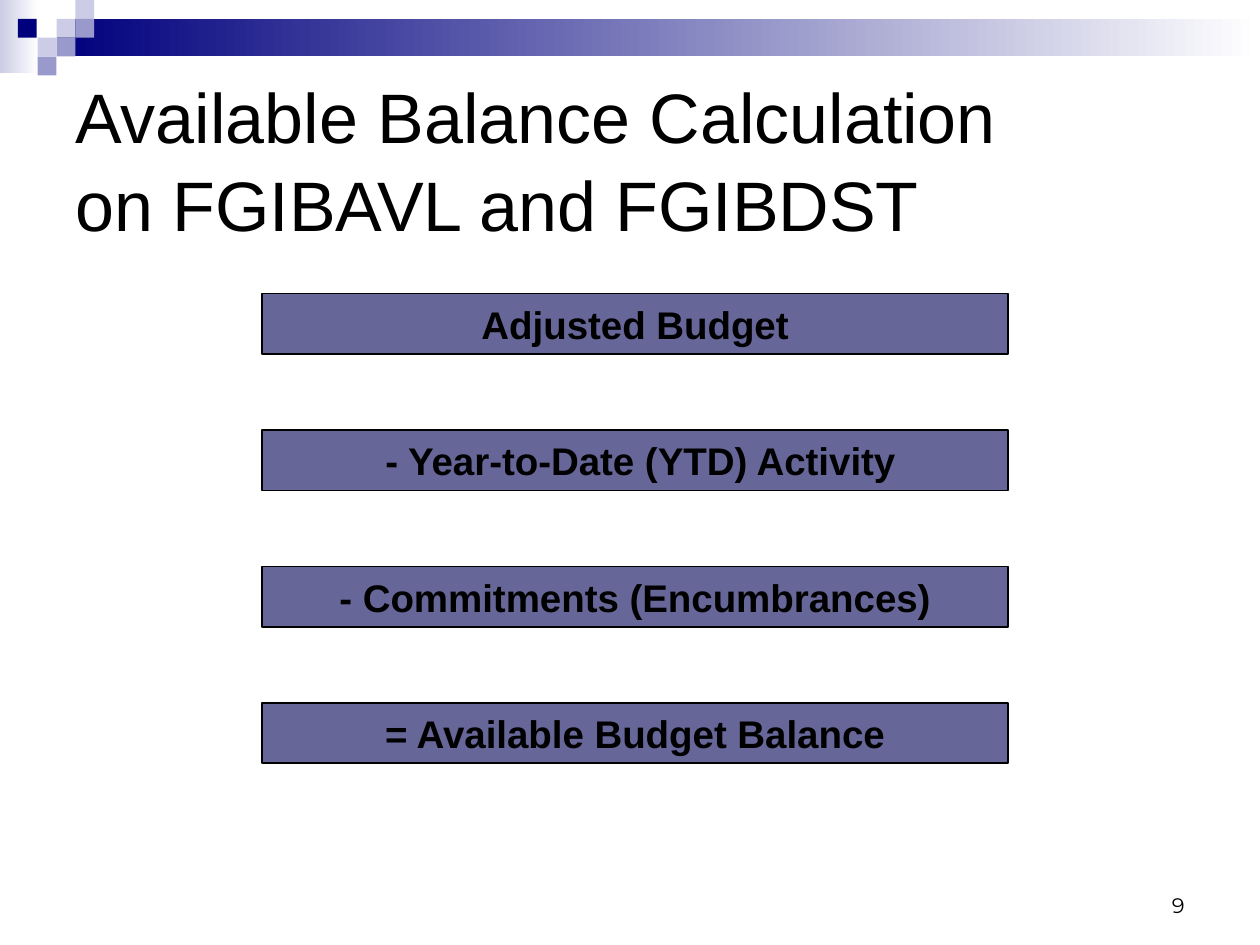
from dataclasses import dataclass

from pptx import Presentation
from pptx.dml.color import RGBColor
from pptx.enum.shapes import MSO_SHAPE
from pptx.enum.text import MSO_ANCHOR, PP_ALIGN
from pptx.util import Cm, Pt

RECTANGLE = MSO_SHAPE.RECTANGLE
MIDDLE, BOTTOM = MSO_ANCHOR.MIDDLE, MSO_ANCHOR.BOTTOM
LEFT, CENTER, RIGHT = PP_ALIGN.LEFT, PP_ALIGN.CENTER, PP_ALIGN.RIGHT


@dataclass(frozen=True)
class Theme:
    navy: str = "00007D"
    lavender: str = "CCCCE6"
    periwinkle: str = "9999CC"
    slate: str = "666699"
    black: str = "000000"
    white: str = "FFFFFF"
    font: str = "Arial"
    number_font: str = "Montserrat"
    title_size: int = 40
    step_size: int = 22
    number_size: int = 12


THEME = Theme()
TILE = 0.38
TILES = [
    (1.14, 0.38, THEME.lavender),
    (1.52, 0, THEME.lavender),
    (1.52, 0.38, THEME.periwinkle),
    (0.76, 0.76, THEME.lavender),
    (0.36, 0.38, THEME.navy),
    (1.14, 0.76, THEME.periwinkle),
    (0.76, 1.14, THEME.periwinkle),
]
TITLE_LINES = ["Available Balance Calculation ", "on FGIBAVL and FGIBDST"]
STEPS = [
    "Adjusted Budget",
    " - Year-to-Date (YTD) Activity",
    "- Commitments (Encumbrances)",
    "= Available Budget Balance",
]
FIRST_STEP_TOP = 5.92
STEP_PITCH = 2.75


def color(value):
    return RGBColor.from_string(value)


def add_span(para, text, size, font=THEME.font, bold=False):
    span = para.add_run()
    span.text = text
    span.font.size = Pt(size)
    span.font.name = font
    span.font.bold = bold
    span.font.color.rgb = color(THEME.black)


def add_box(page, left, top, width, height):
    box = page.shapes.add_shape(RECTANGLE, Cm(left), Cm(top), Cm(width), Cm(height))
    box.shadow.inherit = False
    box.line.fill.background()
    return box


def add_tile(page, left, top, fill):
    tile = add_box(page, left, top, TILE, TILE)
    tile.fill.solid()
    tile.fill.fore_color.rgb = color(fill)


def add_fade(page, left, top, width, height, start):
    band = add_box(page, left, top, width, height)
    band.fill.gradient()
    band.fill.gradient_angle = 0
    for stop, value in zip(band.fill.gradient_stops, (start, THEME.white)):
        stop.color.rgb = color(value)


def add_step(page, top, text):
    box = add_box(page, 5.29, top, 15.03, 1.22)
    box.fill.solid()
    box.fill.fore_color.rgb = color(THEME.slate)
    box.line.color.rgb = color(THEME.black)
    box.line.width = Pt(1)
    box.text_frame.vertical_anchor = MIDDLE
    para = box.text_frame.paragraphs[0]
    para.alignment = CENTER
    add_span(para, text, THEME.step_size, bold=True)


def fill_title(page):
    title = page.shapes.title
    title.left, title.top, title.width, title.height = Cm(1.27), Cm(1.27), Cm(22.86), Cm(3.81)
    title.text_frame.vertical_anchor = MIDDLE
    para = title.text_frame.paragraphs[0]
    para.alignment = LEFT
    para.line_spacing = 1.05
    for index, line in enumerate(TITLE_LINES):
        if index:
            para.add_line_break()
        add_span(para, line, THEME.title_size)


def add_page_number(page, number):
    box = page.shapes.add_textbox(Cm(18.2), Cm(17.35), Cm(5.93), Cm(1.27))
    box.text_frame.word_wrap = True
    box.text_frame.vertical_anchor = BOTTOM
    para = box.text_frame.paragraphs[0]
    para.alignment = RIGHT
    add_span(para, number, THEME.number_size, THEME.number_font)


def main():
    deck = Presentation()
    deck.slide_width, deck.slide_height = Cm(25.4), Cm(19.05)
    page = deck.slides.add_slide(deck.slide_layouts[5])
    add_fade(page, 0, 0, 0.78, 1.47, THEME.lavender)
    add_fade(page, 1.14, 0.38, 24.26, 0.76, THEME.navy)
    for left, top, fill in TILES:
        add_tile(page, left, top, fill)
    fill_title(page)
    for index, text in enumerate(STEPS):
        add_step(page, FIRST_STEP_TOP + index * STEP_PITCH, text)
    add_page_number(page, "9")
    deck.save("out.pptx")


if __name__ == "__main__":
    main()
